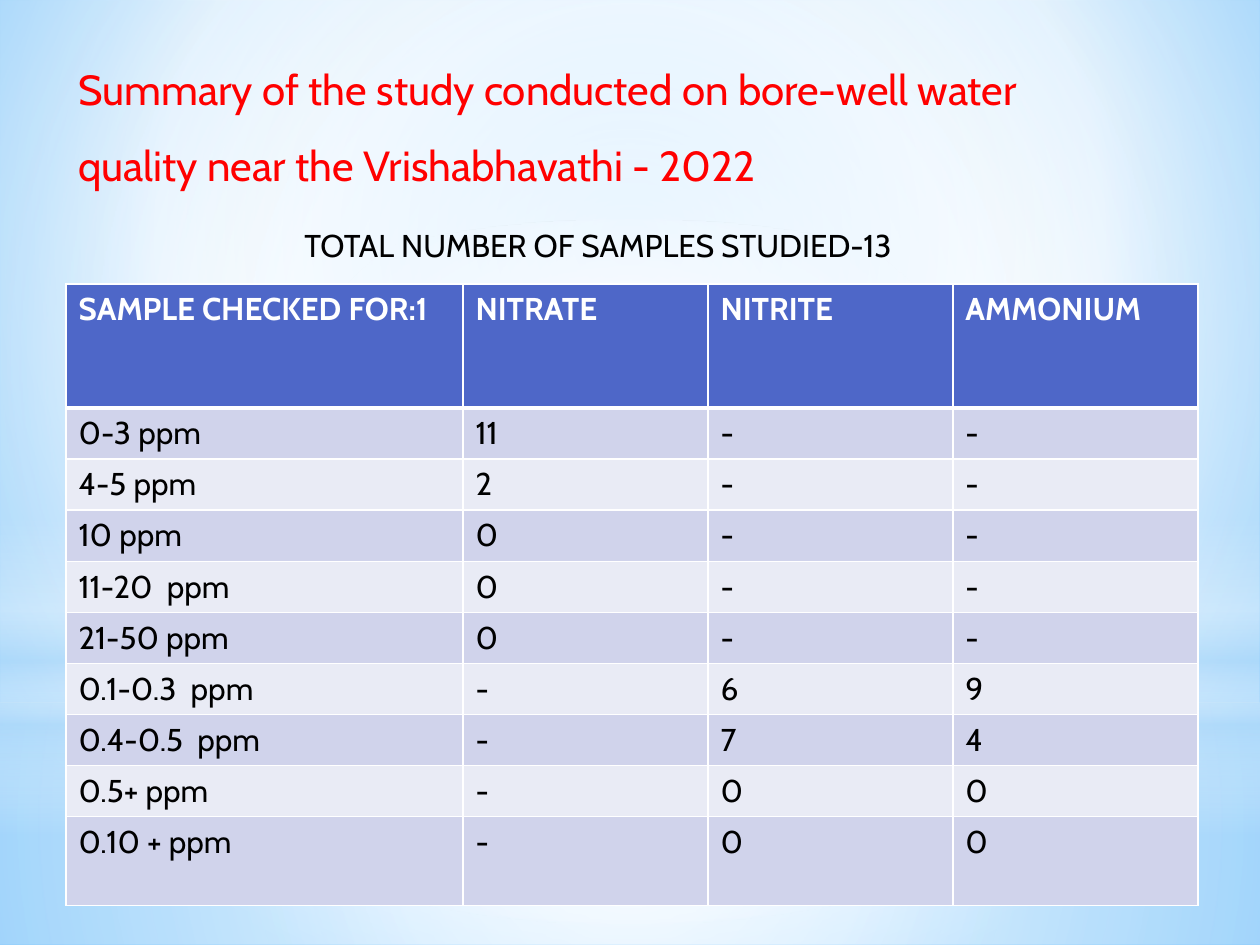
from lxml import etree
from pptx import Presentation
from pptx.dml.color import RGBColor
from pptx.enum.shapes import MSO_SHAPE
from pptx.enum.text import MSO_AUTO_SIZE
from pptx.oxml.ns import qn
from pptx.util import Emu, Pt

RECTANGLE = MSO_SHAPE.RECTANGLE
OVAL = MSO_SHAPE.OVAL
FIT_SHAPE = MSO_AUTO_SIZE.SHAPE_TO_FIT_TEXT

PX_PER_INCH = 126
SLIDE_W, SLIDE_H = 1260, 945
CENTRE = (50, 50, 50, 50)

WHITE, BLACK, RED = "FFFFFF", "000000", "FF0000"
SKY = "B4DCFA"
HEADER_FILL = "4E67C8"
BAND_FILLS = ("D0D3EB", "E9EBF5")

TITLE_LINES = (
    "Summary of the study conducted on bore-well water",
    "quality near the Vrishabhavathi - 2022",
)
SAMPLE_COUNT = "TOTAL NUMBER OF SAMPLES STUDIED-13"
RESULTS = (
    ("SAMPLE CHECKED FOR:1", "NITRATE", "NITRITE", "AMMONIUM"),
    ("0-3 ppm", "11", "-", "-"),
    ("4-5 ppm", "2", "-", "-"),
    ("10 ppm", "0", "-", "-"),
    ("11-20  ppm", "0", "-", "-"),
    ("21-50 ppm", "0", "-", "-"),
    ("0.1-0.3  ppm", "-", "6", "9"),
    ("0.4-0.5  ppm", "-", "7", "4"),
    ("0.5+ ppm", "-", "0", "0"),
    ("0.10 + ppm", "-", "0", "0"),
)
COLUMN_WIDTHS = (397, 245, 245, 245)
ROW_HEIGHTS = (124, *[51] * 8, 89)


def px(length):
    return Emu(round(length * 914400 / PX_PER_INCH))


def color(hex_string):
    return RGBColor.from_string(hex_string)


def gradient_xml(stops, focus=None):
    """Stops are (position, colour, opacity) in percent; no focus means top to bottom."""
    gradient = etree.Element(qn("a:gradFill"), rotWithShape="1")
    stop_list = etree.SubElement(gradient, qn("a:gsLst"))
    for position, hex_string, opacity in stops:
        stop = etree.SubElement(stop_list, qn("a:gs"), pos=str(position * 1000))
        tint = etree.SubElement(stop, qn("a:srgbClr"), val=hex_string)
        if opacity < 100:
            etree.SubElement(tint, qn("a:alpha"), val=str(opacity * 1000))
    if focus:
        circle = etree.SubElement(gradient, qn("a:path"), path="circle")
        sides = {side: str(inset * 1000) for side, inset in zip("ltrb", focus)}
        etree.SubElement(circle, qn("a:fillToRect"), **sides)
    else:
        etree.SubElement(gradient, qn("a:lin"), ang="5400000", scaled="0")
    return gradient


def set_gradient(fill, owner, stops, focus):
    fill.gradient()
    owner.replace(owner.find(qn("a:gradFill")), gradient_xml(stops, focus))


def set_borders(cell, **widths):
    """Draw white borders, widths in points, keyed L, R, T and B."""
    properties = cell._tc.get_or_add_tcPr()
    for index, (side, width) in enumerate(widths.items()):
        border = etree.Element(qn(f"a:ln{side}"), w=str(Pt(width)))
        solid = etree.SubElement(border, qn("a:solidFill"))
        etree.SubElement(solid, qn("a:srgbClr"), val=WHITE)
        properties.insert(index, border)


class SlideBuilder:
    font_name = "Cabin"
    body_size = 18
    title_size = 24

    def __init__(self, slide):
        self.slide = slide

    def background(self, stops, focus):
        fill = self.slide.background.fill
        fill.solid()
        owner = self.slide.element.find(".//" + qn("p:bgPr"))
        set_gradient(fill, owner, stops, focus)

    def glow(self, preset, top, height, stops, focus=CENTRE):
        """Add a full-width gradient shape."""
        shape = self.slide.shapes.add_shape(preset, 0, px(top), px(SLIDE_W), px(height))
        shape.shadow.inherit = False
        shape.line.fill.background()
        set_gradient(shape.fill, shape._element.spPr, stops, focus)

    def run(self, paragraph, text, size, hex_string, bold=False):
        run = paragraph.add_run()
        run.text = text
        run.font.name = self.font_name
        run.font.size = Pt(size)
        run.font.bold = bold
        run.font.color.rgb = color(hex_string)

    def text(self, left, top, width, height, lines, size, hex_string, spacing=1.0):
        box = self.slide.shapes.add_textbox(px(left), px(top), px(width), px(height))
        frame = box.text_frame
        frame.word_wrap = True
        frame.auto_size = FIT_SHAPE
        paragraph = frame.paragraphs[0]
        paragraph.line_spacing = spacing
        for index, line in enumerate(lines):
            if index:
                paragraph.add_line_break()
            self.run(paragraph, line, size, hex_string)

    def table(self, left, top, rows, widths, heights):
        table = self.slide.shapes.add_table(
            len(rows), len(widths), px(left), px(top), px(sum(widths)), px(sum(heights))
        ).table
        for column, width in zip(table.columns, widths):
            column.width = px(width)
        for row, height in zip(table.rows, heights):
            row.height = px(height)
        for row_index, values in enumerate(rows):
            header = row_index == 0
            row_fill = HEADER_FILL if header else BAND_FILLS[(row_index - 1) % 2]
            for column_index, value in enumerate(values):
                cell = table.cell(row_index, column_index)
                cell.fill.solid()
                cell.fill.fore_color.rgb = color(row_fill)
                set_borders(cell, L=1, R=1, T=3 if row_index == 1 else 1, B=3 if header else 1)
                self.run(cell.text_frame.paragraphs[0], value, self.body_size,
                         WHITE if header else BLACK, header)


def main():
    presentation = Presentation()
    presentation.slide_width, presentation.slide_height = px(SLIDE_W), px(SLIDE_H)
    page = SlideBuilder(presentation.slides.add_slide(presentation.slide_layouts[6]))

    page.background([(0, "9ED5FF", 100), (60, WHITE, 100), (100, "5BB9FF", 100)],
                    (20, 10, 20, 60))
    page.glow(RECTANGLE, 703, 242, [(0, WHITE, 91), (37, WHITE, 76), (100, SKY, 79)])
    page.glow(RECTANGLE, 0, 703, [(0, WHITE, 89), (48, WHITE, 62), (100, SKY, 79)])
    page.glow(RECTANGLE, 519, 315,
              [(0, WHITE, 0), (29, WHITE, 30), (45, SKY, 40),
               (55, WHITE, 26), (65, SKY, 60), (100, WHITE, 0)], focus=None)
    page.glow(OVAL, 220, 703, [(0, WHITE, 100), (56, WHITE, 0)])

    page.table(66, 284, RESULTS, COLUMN_WIDTHS, ROW_HEIGHTS)
    page.text(66, 32, 1155, 156, TITLE_LINES, page.title_size, RED, spacing=1.5)
    page.text(292, 220, 703, 50, [SAMPLE_COUNT], page.body_size, BLACK)

    presentation.save("out.pptx")


if __name__ == "__main__":
    main()
